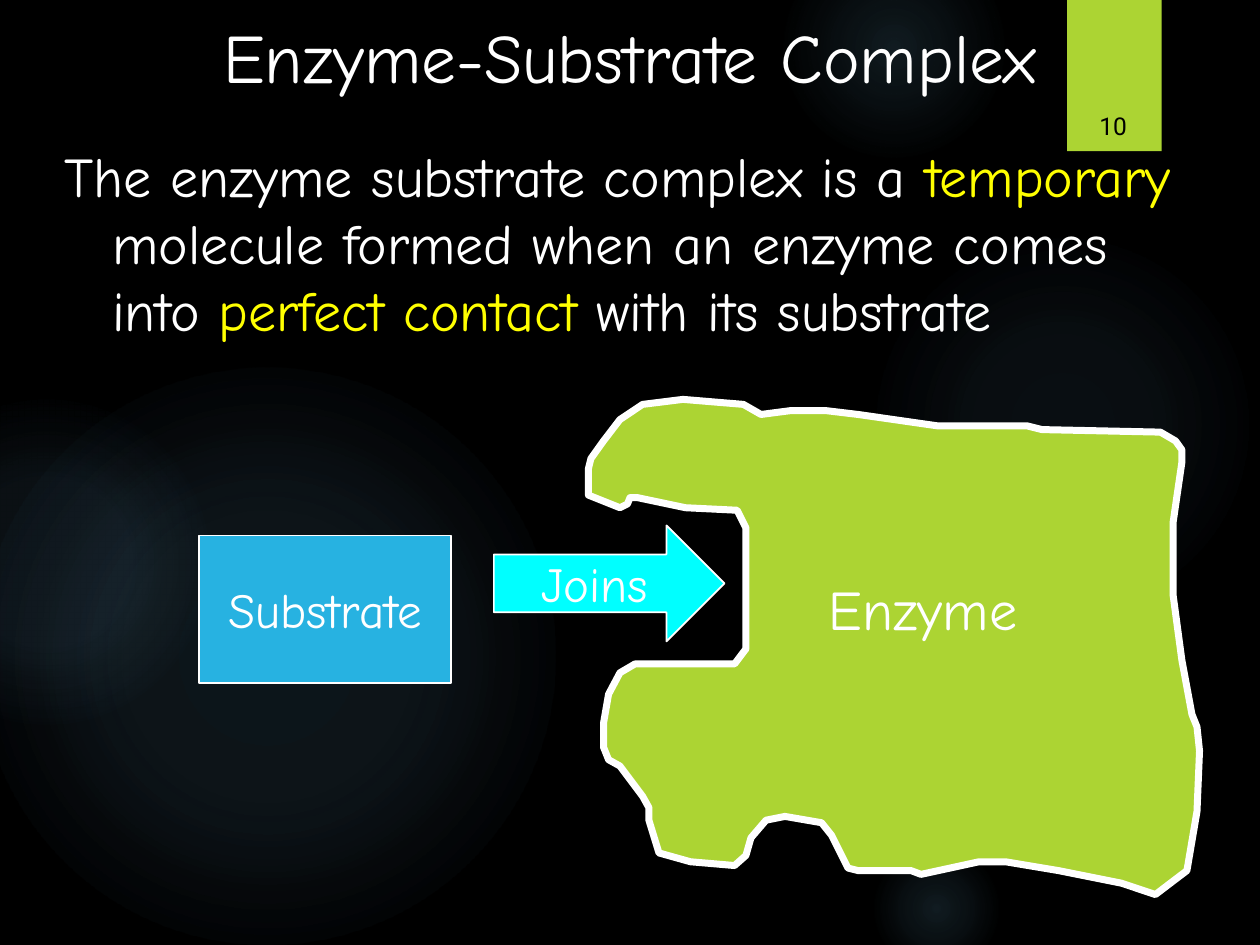
from itertools import chain

from lxml.etree import SubElement as Sub
from pptx import Presentation
from pptx.dml.color import RGBColor
from pptx.enum.shapes import MSO_SHAPE as Shape
from pptx.enum.text import MSO_ANCHOR as Anchor, MSO_AUTO_SIZE as Fit, PP_ALIGN as Align
from pptx.oxml import parse_xml
from pptx.oxml.ns import nsdecls, qn
from pptx.util import Inches, Pt

WHITE, YELLOW, BLACK = "FFFFFF", "FFFF00", "000000"
LIME, BLUE, CYAN, GLOW = "ACD433", "27B2E1", "00FFFF", "7AC4F0"
HAND, PLAIN = "Comic Neue", "Roboto"

GLOWS = [
    dict(left=6.89, top=1.83, size=3.08, centre=7, middle=6, fade=69),
    dict(left=6.22, top=-0.5, size=1.75, centre=14, middle=7, fade=73),
    dict(left=6.89, top=6.67, size=1.08, centre=14, middle=7, fade=66),
    dict(left=-0.17, top=2.92, size=4.58, centre=11, middle=10, fade=75),
    dict(left=-0.92, top=3.17, size=2.58, centre=8, middle=8, fade=72),
]

LABELS = [
    (Shape.RECTANGLE, (1.58, 4.25, 2, 1.17), BLUE, "Substrate"),
    (Shape.RIGHT_ARROW, (3.92, 4.17, 1.83, 0.92), CYAN, "Joins"),
]

BODY = [
    ("The enzyme substrate complex is a ", WHITE), ("temporary ", YELLOW),
    ("molecule formed when an enzyme comes into ", WHITE),
    ("perfect contact ", YELLOW), ("with its substrate", WHITE),
]

ENZYME_EDGES = {
    "site roof": [(5, 3.95), (5.06, 3.95), (5.44, 4.03), (5.85, 4.05)],
    "site wall": [(5.92, 4.19), (5.92, 5.15)],
    "site floor": [(5.83, 5.27), (5.04, 5.27)],
    "lower jaw": [(4.92, 5.34), (4.83, 5.51), (4.79, 5.74), (4.79, 5.93),
                  (4.83, 6.03), (4.92, 6.08), (5.1, 6.32), (5.15, 6.41),
                  (5.15, 6.51), (5.23, 6.77), (5.48, 6.84), (5.83, 6.87)],
    "hollow": [(5.92, 6.79), (5.96, 6.65), (6.08, 6.51), (6.23, 6.48),
               (6.52, 6.53), (6.6, 6.63), (6.73, 6.89)],
    "base": [(6.81, 6.91), (7.23, 6.91), (7.31, 6.94), (7.77, 6.84),
             (7.98, 6.84), (8.4, 6.91), (8.9, 7.01), (9.17, 7.1)],
    "back": [(9.42, 6.91), (9.5, 6.44), (9.52, 5.96), (9.5, 5.77),
             (9.46, 5.67), (9.38, 5.24), (9.31, 4.72), (9.31, 4.15),
             (9.38, 3.67), (9.38, 3.57)],
    "top": [(9.33, 3.5), (9.21, 3.43), (8.27, 3.41), (8.15, 3.38),
            (7.44, 3.38), (6.81, 3.29), (6.56, 3.26), (6.27, 3.26),
            (6.04, 3.29), (5.9, 3.21), (5.42, 3.17), (5.1, 3.21)],
    "upper jaw": [(4.92, 3.33), (4.79, 3.5), (4.69, 3.64), (4.67, 3.72),
                  (4.67, 3.93), (4.92, 4.03), (4.98, 4)],
}


def rgb(value):
    """Turn a hex string into a colour."""
    return RGBColor.from_string(value)


def box(*lengths):
    """Convert lengths in inches."""
    return [Inches(v) for v in lengths]


def set_all(obj, **fmt):
    """Set each format value on an object."""
    for name, value in fmt.items():
        setattr(obj, name, value)


def flat(fill, color):
    """Make a fill one solid colour."""
    fill.solid()
    fill.fore_color.rgb = rgb(color)


def paint(sp, color, line=None, width=1):
    """Give a shape a flat fill and an optional outline."""
    sp.shadow.inherit = False
    flat(sp.fill, color)
    if line:
        flat(sp.line.fill, line)
        sp.line.width = Pt(width)
    else:
        sp.line.fill.background()


def write(sp, runs, size, font=HAND, align=Align.CENTER, **frame):
    """Write one paragraph of (text, colour) runs into a shape."""
    tf = sp.text_frame
    set_all(tf, **frame)
    p = tf.paragraphs[0]
    p.alignment = align
    for text, color in runs:
        r = p.add_run()
        r.text = text
        set_all(r.font, size=Pt(size), name=font)
        r.font.color.rgb = rgb(color)
    return p


def add_glow(s, left, top, size, centre, middle, fade):
    """Add a circle whose opacity falls to zero at the fade percentage."""
    sp = s.shapes.add_shape(Shape.OVAL, *box(left, top, size, size))
    sp.shadow.inherit = False
    sp.line.fill.background()
    stops = "".join(
        f'<a:gs pos="{pos * 1000}"><a:srgbClr val="{GLOW}">'
        f'<a:alpha val="{alpha * 1000}"/></a:srgbClr></a:gs>'
        for pos, alpha in [(0, centre), (36, middle), (fade, 0)])
    grad = parse_xml(
        f'<a:gradFill {nsdecls("a")} rotWithShape="1"><a:gsLst>{stops}</a:gsLst>'
        '<a:path path="circle"><a:fillToRect l="50000" t="50000" r="50000" b="50000"/>'
        '</a:path></a:gradFill>')
    sp.element.spPr.find(qn("a:prstGeom")).addnext(grad)


def place(sp, *lengths):
    """Move a placeholder and bring it to the front."""
    set_all(sp, **dict(zip(("left", "top", "width", "height"), box(*lengths))))
    sp.element.getparent().append(sp.element)
    return sp


def add_title(s):
    """Fill the title placeholder."""
    sp = place(s.shapes.title, 0, 0.06, 10, 0.75)
    write(sp, [("Enzyme-Substrate Complex", WHITE)], 39.6, auto_size=Fit.NONE,
          vertical_anchor=Anchor.TOP)


def add_body(s):
    """Fill the body with a hanging paragraph without a bullet."""
    sp = place(s.placeholders[1], 0.41, 1.07, 9.18, 5.33)
    p = write(sp, BODY, 32, align=Align.LEFT, auto_size=Fit.NONE,
              vertical_anchor=Anchor.TOP)
    p.space_before = Pt(10)
    hang = Inches(0.38)
    pPr = p._p.get_or_add_pPr()
    for name, value in {"marL": hang, "indent": -hang}.items():
        pPr.set(name, str(value))
    Sub(pPr, qn("a:buNone"))


def add_page_number(s):
    """Add the page number over its tab."""
    sp = s.shapes.add_textbox(*box(8.49, 0.32, 0.69, 0.84))
    write(sp, [("10", BLACK)], 14, PLAIN, word_wrap=True,
          vertical_anchor=Anchor.BOTTOM)


def add_enzyme(s):
    """Join the edges into the enzyme outline and group it with its label."""
    group = s.shapes.add_group_shape()
    start, *rest = [box(*pt) for pt in chain.from_iterable(ENZYME_EDGES.values())]
    pen = group.shapes.build_freeform(*start)
    pen.add_line_segments(rest, close=True)
    paint(pen.convert_to_shape(), LIME, WHITE, 4)
    label = group.shapes.add_textbox(*box(6.48, 4.51, 1.77, 0.63))
    write(label, [("Enzyme", WHITE)], 32, align=Align.LEFT, word_wrap=False,
          auto_size=Fit.SHAPE_TO_FIT_TEXT)


def add_label_shape(s, kind, at, color, text):
    """Add an outlined shape with a centred label."""
    sp = s.shapes.add_shape(kind, *box(*at))
    paint(sp, color, WHITE)
    write(sp, [(text, WHITE)], 28, word_wrap=False, vertical_anchor=Anchor.MIDDLE)


def main():
    """Build and save the slide."""
    prs = Presentation()
    set_all(prs, slide_width=Inches(10), slide_height=Inches(7.5))
    s = prs.slides.add_slide(prs.slide_layouts[1])
    flat(s.background.fill, BLACK)
    for glow in GLOWS:
        add_glow(s, **glow)
    paint(s.shapes.add_shape(Shape.RECTANGLE, *box(8.47, 0, 0.75, 1.2)), LIME)
    for add in (add_title, add_body, add_page_number, add_enzyme):
        add(s)
    for label in LABELS:
        add_label_shape(s, *label)
    prs.save("out.pptx")


if __name__ == "__main__":
    main()
